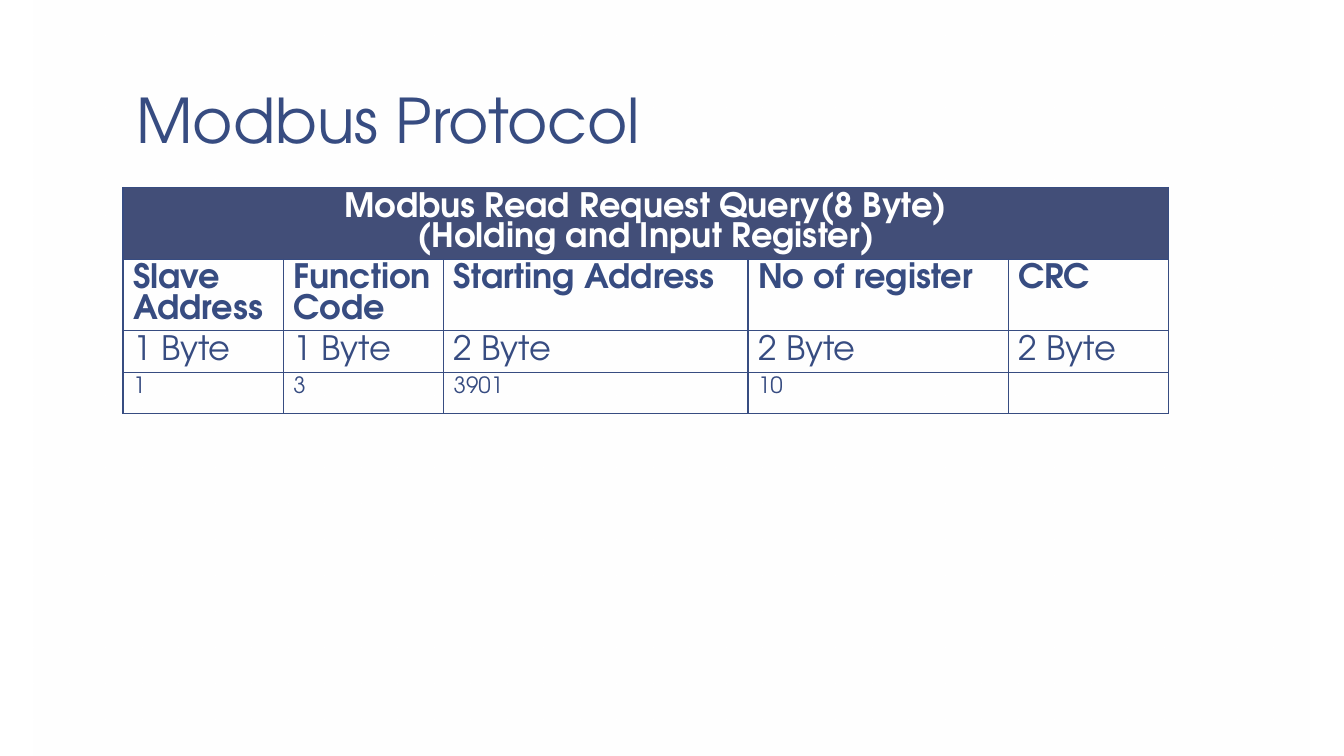
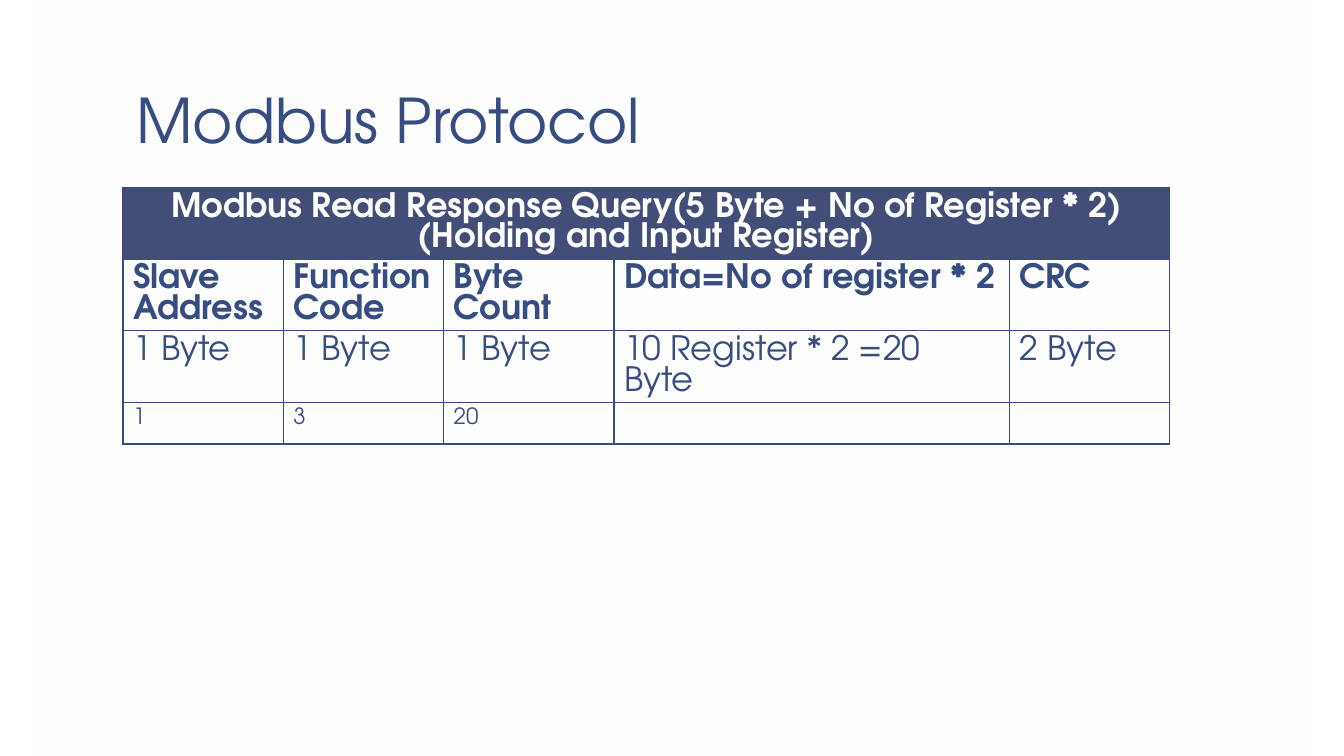
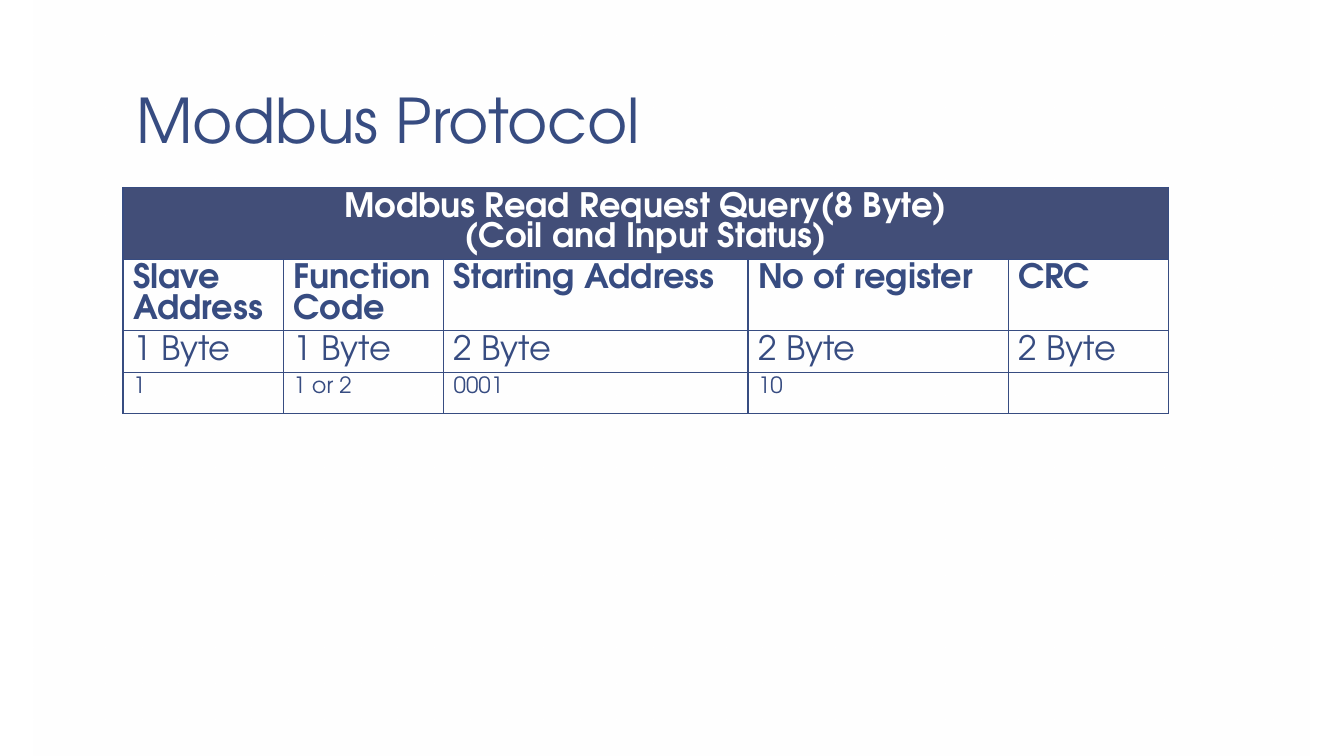
"""Build three slides that lay out Modbus read queries as tables."""
from lxml.etree import SubElement
from pptx import Presentation
from pptx.dml.color import RGBColor
from pptx.enum.shapes import MSO_SHAPE
from pptx.enum.text import MSO_ANCHOR, PP_ALIGN
from pptx.oxml.ns import qn
from pptx.util import Inches, Pt

FONT = "TeX Gyre Adventor"
COLORS = {"ink": "374C81", "header": "424E78", "on_header": "FFFFFF", "panel": "FFFFFF"}
TITLE = "Modbus Protocol"
LEFT, TITLE_TOP, TABLE_TOP = 1.22, 0.09, 1.86
TITLE_WIDTH, TITLE_HEIGHT = 11.11, 1.53
PANEL_LEFT, PANEL_WIDTH, SLIDE_WIDTH, SLIDE_HEIGHT = 0.33, 12.66, 13.33, 7.5
ROW_HEIGHT = 0.41
CELL_SPACING = Pt(22)

REQUEST_WIDTHS = (1.59, 1.59, 3.02, 2.58, 1.59)
RESPONSE_WIDTHS = (1.59, 1.59, 1.69, 3.92, 1.59)
REQUEST_FIELDS = ("Slave Address", "Function\nCode", "Starting Address", "No of register", "CRC")
RESPONSE_FIELDS = ("Slave Address", "Function\nCode", "Byte Count", "Data=No of register * 2", "CRC")
REQUEST_SIZES = ("1 Byte", "1 Byte", "2 Byte", "2 Byte", "2 Byte")
RESPONSE_SIZES = ("1 Byte", "1 Byte", "1 Byte", "10 Register * 2 =20 Byte", "2 Byte")

QUERIES = [
    {
        "heading": "Modbus Read Request Query(8 Byte)\n(Holding and Input Register)",
        "widths": REQUEST_WIDTHS,
        "rows": (REQUEST_FIELDS, REQUEST_SIZES, ("1", "3", "3901", "10", "")),
    },
    {
        "heading": "Modbus Read Response Query(5 Byte + No of Register * 2)\n(Holding and Input Register)",
        "widths": RESPONSE_WIDTHS,
        "rows": (RESPONSE_FIELDS, RESPONSE_SIZES, ("1", "3", "20", "", "")),
    },
    {
        "heading": "Modbus Read Request Query(8 Byte)\n(Coil and Input Status)",
        "widths": REQUEST_WIDTHS,
        "rows": (REQUEST_FIELDS, REQUEST_SIZES, ("1", "1 or 2", "0001", "10", "")),
    },
]
ROW_STYLES = (
    {"bold": True, "spacing": CELL_SPACING},
    {"spacing": CELL_SPACING},
    {"size": 16},
)


def write(frame, text, size=24, color="ink", bold=False, align=PP_ALIGN.LEFT, spacing=None):
    """Write one paragraph per line of text."""
    for index, line in enumerate(text.split("\n")):
        paragraph = frame.add_paragraph() if index else frame.paragraphs[0]
        paragraph.alignment = align
        paragraph.line_spacing = spacing
        if line:
            run = paragraph.add_run()
            run.text = line
            run.font.name = FONT
            run.font.size = Pt(size)
            run.font.bold = bold
            run.font.color.rgb = RGBColor.from_string(COLORS[color])


def add_panel(slide):
    """Add the shared background panel, which fades out along its gradient."""
    panel = slide.shapes.add_shape(
        MSO_SHAPE.RECTANGLE, Inches(PANEL_LEFT), 0, Inches(PANEL_WIDTH), Inches(SLIDE_HEIGHT)
    )
    panel.shadow.inherit = False
    panel.line.fill.background()
    panel.fill.gradient()
    panel.fill.gradient_angle = 230
    for stop in panel.fill.gradient_stops:
        stop.color.rgb = RGBColor.from_string(COLORS["panel"])
    last_color = list(panel.fill._fill._gradFill.iter(qn("a:srgbClr")))[-1]
    SubElement(last_color, qn("a:alpha"), val="45000")


def add_borders(cell):
    """Draw a thin line on all four sides of a cell."""
    properties = cell._tc.get_or_add_tcPr()
    for side in ("lnL", "lnR", "lnT", "lnB"):
        border = SubElement(properties, qn(f"a:{side}"), w=str(Pt(1)))
        fill = SubElement(border, qn("a:solidFill"))
        SubElement(fill, qn("a:srgbClr"), val=COLORS["ink"])


def add_title(slide):
    """Add the shared slide title."""
    frame = slide.shapes.add_textbox(
        Inches(LEFT), Inches(TITLE_TOP), Inches(TITLE_WIDTH), Inches(TITLE_HEIGHT)
    ).text_frame
    frame.word_wrap = True
    frame.vertical_anchor = MSO_ANCHOR.BOTTOM
    frame.margin_left = frame.margin_right = Inches(0.13)
    frame.margin_top = frame.margin_bottom = Inches(0.07)
    write(frame, TITLE, size=44, spacing=0.85)


def add_query(slide, heading, widths, rows):
    """Add a query table with a heading across all columns."""
    row_count = len(rows) + 1
    table = slide.shapes.add_table(
        row_count, len(widths), Inches(LEFT), Inches(TABLE_TOP),
        Inches(sum(widths)), Inches(ROW_HEIGHT * row_count),
    ).table
    table.first_row = table.horz_banding = False
    for column, width in zip(table.columns, widths):
        column.width = Inches(width)
    for row in table.rows:
        row.height = Inches(ROW_HEIGHT)
    for cell in table.iter_cells():
        add_borders(cell)
        cell.fill.background()

    header = table.cell(0, 0)
    header.merge(table.cell(0, len(widths) - 1))
    header.fill.solid()
    header.fill.fore_color.rgb = RGBColor.from_string(COLORS["header"])
    write(header.text_frame, heading, color="on_header", bold=True,
          align=PP_ALIGN.CENTER, spacing=CELL_SPACING)
    for row_index, (values, style) in enumerate(zip(rows, ROW_STYLES), start=1):
        for column_index, value in enumerate(values):
            write(table.cell(row_index, column_index).text_frame, value, **style)


def main():
    """Build and save the presentation."""
    deck = Presentation()
    deck.slide_width, deck.slide_height = Inches(SLIDE_WIDTH), Inches(SLIDE_HEIGHT)
    for query in QUERIES:
        slide = deck.slides.add_slide(deck.slide_layouts[6])
        add_panel(slide)
        add_title(slide)
        add_query(slide, **query)
    deck.save("out.pptx")


if __name__ == "__main__":
    main()
